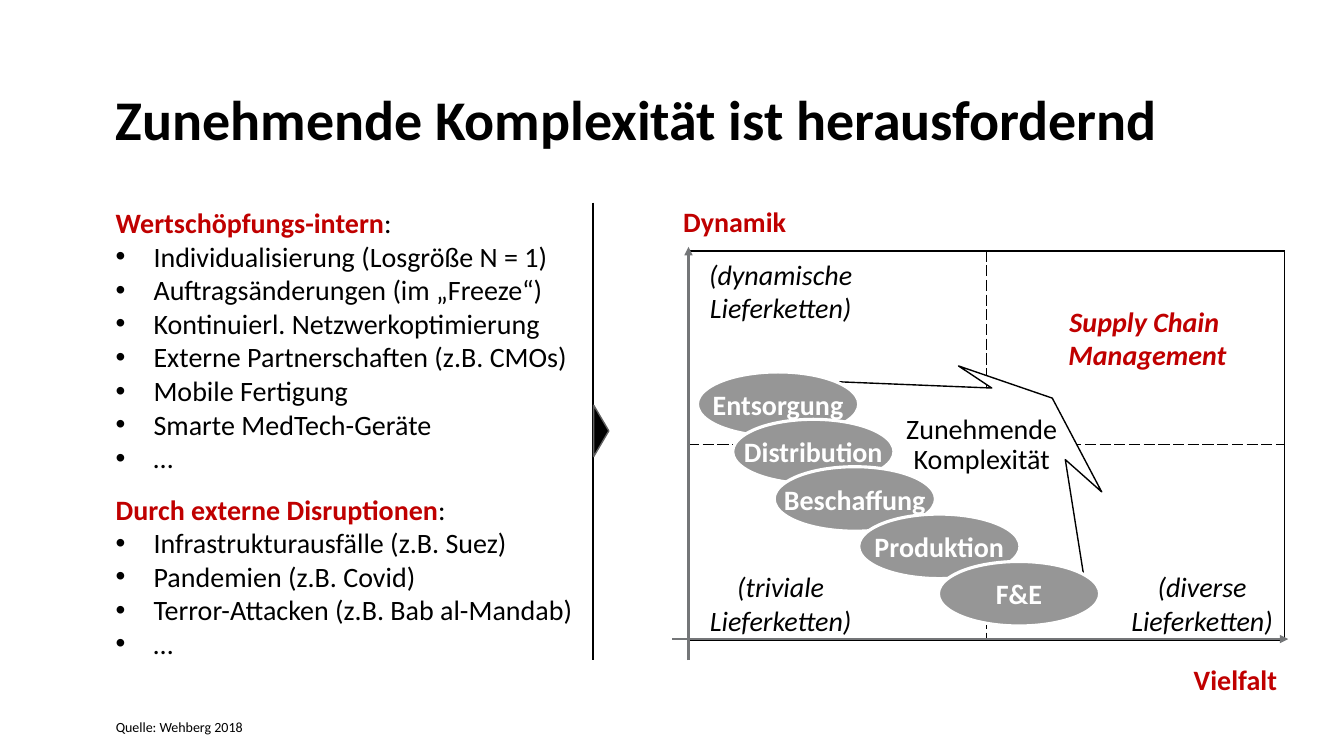
from dataclasses import dataclass

from lxml import etree
from pptx import Presentation
from pptx.dml.color import RGBColor
from pptx.enum import shapes, text
from pptx.oxml import ns
from pptx.util import Pt

COLORS = {
    "black": "000000", "white": "FFFFFF", "red": "C00000",
    "axis": "747678", "bubble": "969696", "edge": "616161",
}
FONT = "Calibri"
LEFT, CENTER, RIGHT = text.PP_ALIGN.LEFT, text.PP_ALIGN.CENTER, text.PP_ALIGN.RIGHT
TOP, MIDDLE, BOTTOM = text.MSO_ANCHOR.TOP, text.MSO_ANCHOR.MIDDLE, text.MSO_ANCHOR.BOTTOM


@dataclass
class Style:
    size: float = 20
    color: str = "black"
    bold: bool = False
    italic: bool = False
    align: int = LEFT
    spacing: float = 1.0


@dataclass
class Label:
    words: str
    left: float
    top: float
    width: float
    height: float
    style: Style
    anchor: int = TOP
    margins: tuple[float, float] = (0, 4.3)


@dataclass
class Line:
    start: tuple[float, float]
    end: tuple[float, float]
    color: str
    arrow: bool = False


@dataclass
class Topic:
    heading: str
    points: list[str]
    gap: float = 0


AXIS_NAME = {"color": "red", "bold": True, "align": RIGHT, "spacing": 0.9}
QUADRANT = Style(italic=True, align=CENTER)
WIDE = (7.2, 3.6)
LABELS = [
    Label("Zunehmende Komplexität ist herausfordernd", 75.6, 25.2, 817.9, 118.8,
          Style(40, bold=True), MIDDLE, WIDE),
    Label("Dynamik", 463.7, 144.7, 97.9, 33.8, Style(**AXIS_NAME)),
    Label("Vielfalt", 771.1, 471.6, 141.1, 33.8, Style(**AXIS_NAME)),
    Label("Zunehmende\vKomplexität", 643.7, 292.3, 115.2, 33.8,
          Style(align=CENTER, spacing=0.9)),
    Label("(dynamische Lieferketten)", 486, 179.3, 143.3, 33.8, QUADRANT),
    Label("(triviale\vLieferketten)", 486, 402.5, 143.3, 33.8, QUADRANT),
    Label("(diverse\vLieferketten)", 787, 402.5, 143.3, 33.8, QUADRANT),
    Label("Quelle: Wehberg 2018", 75.6, 507.6, 118.8, 20.9, Style(10), BOTTOM, WIDE),
]
TOPICS = [
    Topic("Wertschöpfungs-intern", [
        "Individualisierung (Losgröße N = 1)", "Auftragsänderungen (im „Freeze“)",
        "Kontinuierl. Netzwerkoptimierung", "Externe Partnerschaften (z.B. CMOs)",
        "Mobile Fertigung", "Smarte MedTech-Geräte", "…"]),
    Topic("Durch externe Disruptionen", [
        "Infrastrukturausfälle (z.B. Suez)", "Pandemien (z.B. Covid)",
        "Terror-Attacken (z.B. Bab al-Mandab)", "…"], gap=12.6),
]
LINES = [
    Line((491.8, 471.6), (491.8, 176.4), "axis", arrow=True),
    Line((480.2, 456.5), (920.2, 456.5), "axis", arrow=True),
    Line((423.4, 144.7), (423.4, 471.6), "black"),
]
STAGES = {"Entsorgung": 498.2, "Distribution": 523.4, "Beschaffung": 553,
          "Produktion": 613.4, "F&E": 670.3}
STAGE_TOP, STAGE_STEP = 265.7, 33.84
ARROW_OUTLINE = [(532.1, 270), (708.5, 277.2), (684.7, 261.4), (751.7, 284.4), (787, 351.4),
                 (761, 328.3), (775.4, 419), (684.7, 416.9)]


def rgb(name: str) -> RGBColor:
    return RGBColor.from_string(COLORS[name])


def format_span(span, style: Style) -> None:
    font = span.font
    font.name, font.size = FONT, Pt(style.size)
    font.bold, font.italic = style.bold, style.italic
    font.color.rgb = rgb(style.color)


def fill_text(shape, label: Label, wrap: bool) -> None:
    frame = shape.text_frame
    frame.text = label.words
    frame.word_wrap, frame.vertical_anchor = wrap, label.anchor
    frame.margin_left = frame.margin_right = Pt(label.margins[0])
    frame.margin_top = frame.margin_bottom = Pt(label.margins[1])
    para = frame.paragraphs[0]
    para.alignment, para.line_spacing = label.style.align, label.style.spacing
    for span in para.runs:
        format_span(span, label.style)


def paint(shape, fill: str, line: str | None = None, width: float = 1) -> None:
    shape.shadow.inherit = False
    shape.fill.solid()
    shape.fill.fore_color.rgb = rgb(fill)
    if line is None:
        shape.line.fill.background()
    else:
        shape.line.color.rgb = rgb(line)
        shape.line.width = Pt(width)


def add_label(page, label: Label) -> None:
    box = page.shapes.add_textbox(
        Pt(label.left), Pt(label.top), Pt(label.width), Pt(label.height))
    fill_text(box, label, wrap=True)


def add_ellipse(page, label: Label, fill: str, line: str | None = None) -> None:
    ellipse = page.shapes.add_shape(
        shapes.MSO_SHAPE.OVAL,
        Pt(label.left), Pt(label.top), Pt(label.width), Pt(label.height))
    paint(ellipse, fill, line, 2.25)
    fill_text(ellipse, label, wrap=False)


def add_line(page, line: Line) -> None:
    connector = page.shapes.add_connector(
        shapes.MSO_CONNECTOR.STRAIGHT, *map(Pt, line.start + line.end))
    connector.line.color.rgb = rgb(line.color)
    connector.line.width = Pt(1.5)
    if line.arrow:
        outline = connector.line._get_or_add_ln()
        etree.SubElement(outline, ns.qn("a:tailEnd"), type="triangle")
    etree.SubElement(connector._element.spPr, ns.qn("a:effectLst"))


def add_bullet(para) -> None:
    properties = para._p.get_or_add_pPr()
    properties.set("marL", str(Pt(27)))
    properties.set("indent", str(-Pt(27)))
    color = etree.SubElement(properties, ns.qn("a:buClr"))
    etree.SubElement(color, ns.qn("a:srgbClr"), val=COLORS["black"])
    etree.SubElement(properties, ns.qn("a:buFont"), typeface="Arial")
    etree.SubElement(properties, ns.qn("a:buChar"), char="•")


def add_topics(page) -> None:
    frame = page.shapes.add_textbox(Pt(75.6), Pt(143.3), Pt(364.3), Pt(319.7)).text_frame
    frame.word_wrap = True
    for topic in TOPICS:
        para = frame.add_paragraph() if topic.gap else frame.paragraphs[0]
        para.text = topic.heading
        para.space_before = Pt(topic.gap)
        format_span(para.runs[0], Style(color="red", bold=True))
        colon = para.add_run()
        colon.text = ":"
        format_span(colon, Style())
        for point in topic.points:
            para = frame.add_paragraph()
            para.text = point
            add_bullet(para)
            format_span(para.runs[0], Style())


def add_matrix(page) -> None:
    """Two by two grid: solid outer borders, dashed inner ones."""
    heights = (138.2, 139.7)
    table = page.shapes.add_table(
        2, 2, Pt(491.8), Pt(179.3), Pt(425.5), Pt(sum(heights))).table
    table.first_row = table.horz_banding = False
    for row, height in enumerate(heights):
        table.rows[row].height = Pt(height)
        for column in range(2):
            cell = table.cell(row, column)
            cell.fill.background()
            inner = {"L": column == 1, "R": column == 0, "T": row == 1, "B": row == 0}
            for position, (side, dashed) in enumerate(inner.items()):
                border = etree.Element(ns.qn(f"a:ln{side}"), w=str(Pt(1)))
                fill = etree.SubElement(border, ns.qn("a:solidFill"))
                etree.SubElement(fill, ns.qn("a:srgbClr"), val=COLORS["black"])
                dash = "lgDash" if dashed else "solid"
                etree.SubElement(border, ns.qn("a:prstDash"), val=dash)
                cell._tc.get_or_add_tcPr().insert(position, border)


def add_complexity_arrow(page) -> None:
    start, *others = [(Pt(x), Pt(y)) for x, y in ARROW_OUTLINE]
    builder = page.shapes.build_freeform(*start)
    builder.add_line_segments(others, close=True)
    paint(builder.convert_to_shape(), "white", "black")


def main() -> None:
    deck = Presentation()
    deck.slide_width, deck.slide_height = Pt(960), Pt(540)
    page = deck.slides.add_slide(deck.slide_layouts[6])
    add_topics(page)
    add_matrix(page)
    add_complexity_arrow(page)
    for line in LINES:
        add_line(page, line)
    add_ellipse(page, Label("Supply Chain \vManagement", 728.6, 197.3, 182.2, 87.8,
                            Style(color="red", bold=True, italic=True, align=CENTER),
                            MIDDLE, WIDE), "white")
    stage_style = Style(color="white", bold=True, align=CENTER)
    for index, (stage, left) in enumerate(STAGES.items()):
        add_ellipse(page, Label(stage, left, STAGE_TOP + index * STAGE_STEP, 115.2, 46.1,
                                stage_style, MIDDLE, (2.9, 3.6)), "bubble", "white")
    for label in LABELS:
        add_label(page, label)
    pointer = page.shapes.add_shape(
        shapes.MSO_SHAPE.ISOSCELES_TRIANGLE, Pt(411.1), Pt(302.4), Pt(36.7), Pt(10.8))
    pointer.rotation = 90
    paint(pointer, "black", "edge")
    deck.save("out.pptx")


if __name__ == "__main__":
    main()
